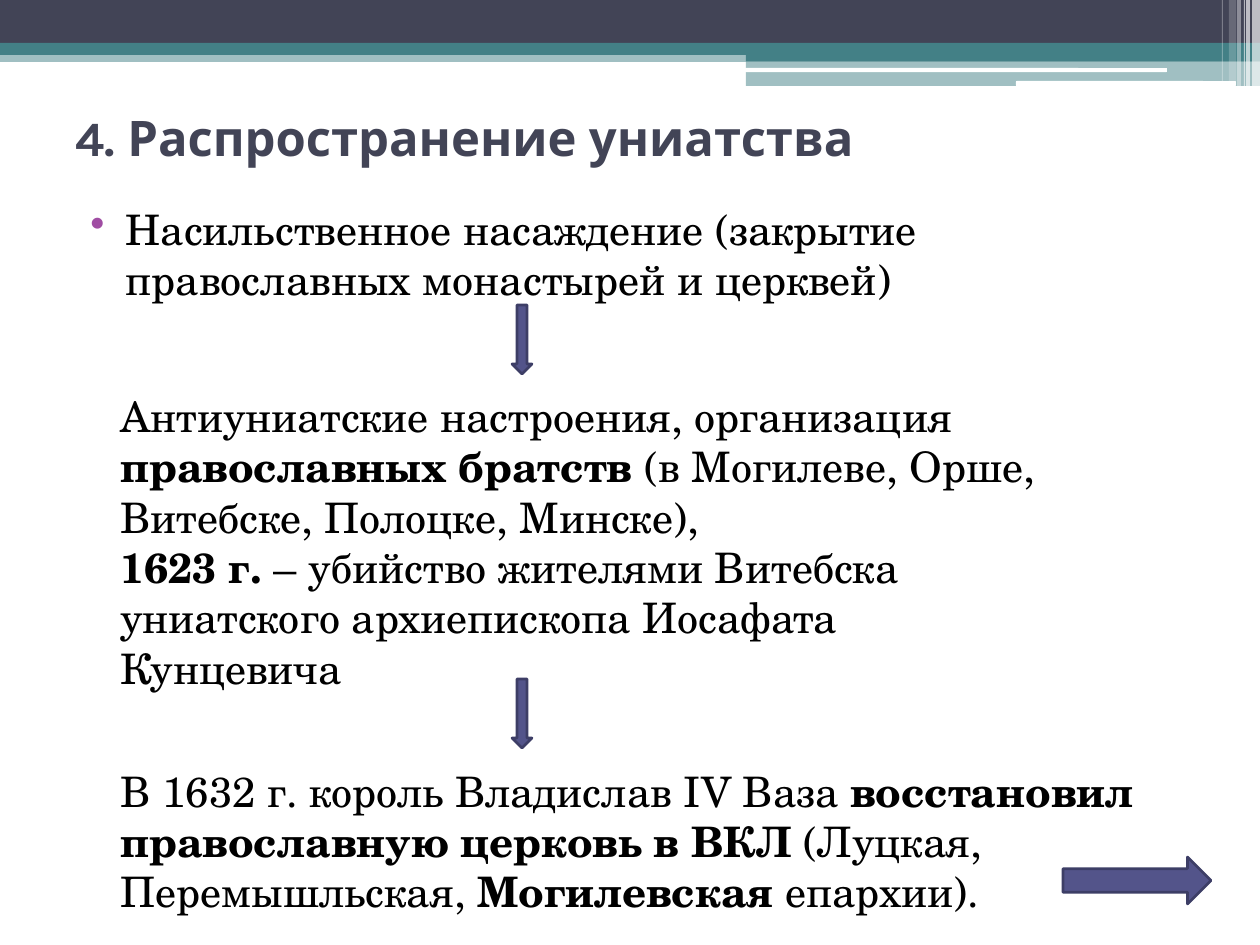
"""Build the slide on the spread of the Uniate church."""
from typing import NamedTuple, Optional

from lxml import etree
from pptx import Presentation
from pptx import util as u
from pptx.dml.color import RGBColor
from pptx.enum import shapes, text
from pptx.oxml.ns import qn

EMU_PER_PX = 914400 / 126
SERIF = "TeX Gyre Schola"
KIND = shapes.MSO_SHAPE
TEAL, NAVY, WHITE, BLACK = "438086", "424456", "FFFFFF", "000000"


class Box(NamedTuple):
    """Place and size in px."""
    x: int
    y: int
    w: int
    h: int


class Block(NamedTuple):
    """Preset shape with its fill and optional outline."""
    box: Box
    fill: str
    alpha: int = 100
    kind: int = KIND.RECTANGLE
    line: Optional[str] = None


class Run(NamedTuple):
    """Piece of text with one weight."""
    words: str
    bold: bool = False


class Style(NamedTuple):
    """Font, size and colour of a text box."""
    font: str = SERIF
    size: int = 24
    color: str = BLACK


def px(n: int) -> u.Emu:
    """Turn px into EMU."""
    return u.Emu(round(n * EMU_PER_PX))


def rgb(code: str) -> RGBColor:
    """Turn a hex string into a colour."""
    return RGBColor.from_string(code)


def add_block(s, block: Block) -> None:
    """Draw one preset shape."""
    sp = s.shapes.add_shape(block.kind, *map(px, block.box))
    sp.shadow.inherit = False
    sp.fill.solid()
    sp.fill.fore_color.rgb = rgb(block.fill)
    if block.alpha < 100:
        clr = sp.fill._xPr.find(".//" + qn("a:srgbClr"))
        etree.SubElement(clr, qn("a:alpha")).set("val", str(block.alpha * 1000))
    if block.line:
        sp.line.color.rgb = rgb(block.line)
        sp.line.width = u.Pt(1.5)
    else:
        sp.line.fill.background()


def add_bullet(p, color: str) -> None:
    """Give a paragraph a hanging coloured bullet."""
    pPr = p._p.get_or_add_pPr()
    pPr.set("marL", str(u.Inches(0.4)))
    pPr.set("indent", str(u.Inches(-0.28)))
    clr = etree.SubElement(pPr, qn("a:buClr"))
    etree.SubElement(clr, qn("a:srgbClr")).set("val", color)
    etree.SubElement(pPr, qn("a:buChar")).set("char", "•")


def add_text(s, box: Box, paragraphs: list[list[Run]], style: Style = Style(),
             anchor=text.MSO_ANCHOR.TOP, bullet: Optional[str] = None) -> None:
    """Draw a wrapping text box run by run."""
    tf = s.shapes.add_textbox(*map(px, box)).text_frame
    tf.word_wrap = True
    tf.vertical_anchor = anchor
    for i, runs in enumerate(paragraphs):
        p = tf.add_paragraph() if i else tf.paragraphs[0]
        if bullet:
            add_bullet(p, bullet)
        for run in runs:
            r = p.add_run()
            r.text = run.words
            r.font.name = style.font
            r.font.size = u.Pt(style.size)
            r.font.bold = run.bold
            r.font.color.rgb = rgb(style.color)


def arrow(box: Box, kind: int = KIND.DOWN_ARROW) -> Block:
    """Describe an outlined block arrow."""
    return Block(box, "53548A", kind=kind, line="3D3E66")


BANDS = [
    Block(Box(0, 50, 1260, 12), TEAL, 50),
    Block(Box(0, 0, 1260, 43), NAVY),
    Block(Box(0, 43, 1260, 12), TEAL),
    Block(Box(746, 49, 514, 12), TEAL),
    Block(Box(746, 61, 514, 25), TEAL, 50),
    Block(Box(745, 68, 422, 4), WHITE, kind=KIND.ROUNDED_RECTANGLE),
    Block(Box(1016, 81, 220, 5), WHITE, kind=KIND.ROUNDED_RECTANGLE),
]
STRIPES = [Block(Box(x, 0, w, h), WHITE, alpha) for x, w, h, alpha in [
    (1252, 8, 86, 65), (1246, 4, 86, 65), (1244, 1, 86, 60),
    (1237, 4, 86, 40), (1229, 7, 81, 20), (1222, 1, 81, 30),
]]
ARROWS = [arrow(Box(512, y, 20, 69)) for y in (305, 679)]
ARROWS.append(arrow(Box(1063, 857, 148, 47), KIND.RIGHT_ARROW))

TITLE = [[Run("4. Распространение униатства", True)]]
CAUSE = [[Run("Насильственное насаждение (закрытие православных монастырей и церквей)")]]
PROTEST = [
    [Run("Антиуниатские настроения, организация "),
     Run("православных братств ", True),
     Run("(в Могилеве, Орше, Витебске, Полоцке, Минске),")],
    [Run("1623 г. ", True),
     Run("– убийство жителями Витебска униатского архиепископа Иосафата Кунцевича")],
]
RESULT = [[
    Run("В 1632 г. король Владислав IV Ваза "),
    Run("восстановил православную церковь в ВКЛ", True),
    Run(" (Луцкая, Перемышльская, "),
    Run("Могилевская", True),
    Run(" епархии)."),
]]


def main() -> None:
    """Build and save the slide."""
    prs = Presentation()
    prs.slide_width, prs.slide_height = px(1260), px(945)
    s = prs.slides.add_slide(prs.slide_layouts[6])
    for block in BANDS + STRIPES:
        add_block(s, block)
    add_text(s, Box(63, 88, 1134, 98), TITLE, Style("Karla", 28, NAVY),
             anchor=text.MSO_ANCHOR.MIDDLE)
    add_text(s, Box(63, 197, 1134, 709), CAUSE, bullet="A04DA3")
    add_text(s, Box(108, 384, 955, 369), PROTEST)
    add_text(s, Box(108, 759, 1092, 165), RESULT)
    for block in ARROWS:
        add_block(s, block)
    prs.save("out.pptx")


if __name__ == "__main__":
    main()
